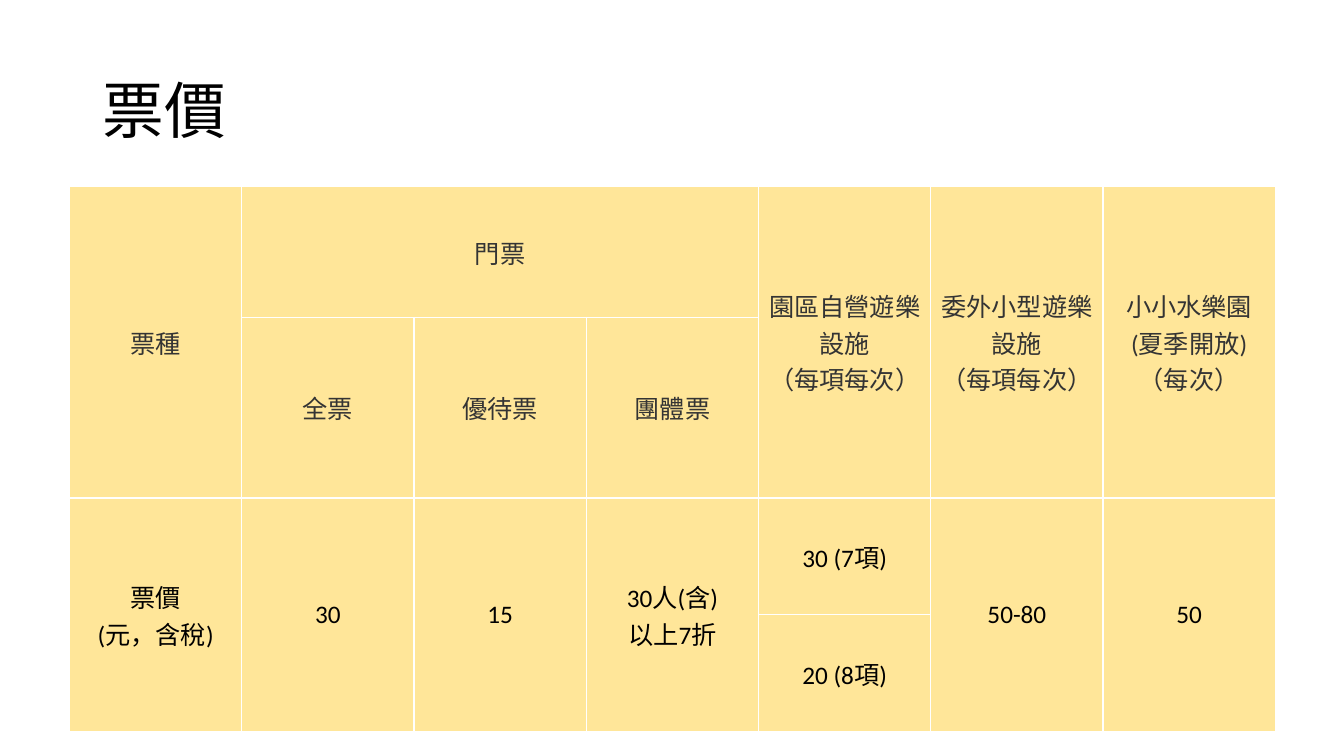
import pptx
import pptx.util
import pptx.dml.color
import pptx.enum.text
import pptx.oxml
import pptx.oxml.ns

Inches = pptx.util.Inches
Pt = pptx.util.Pt
ANCHOR = pptx.enum.text.MSO_ANCHOR
ALIGN = pptx.enum.text.PP_ALIGN

FONT = "Calibri"
COLORS = {"black": "000000", "header": "343434", "cell": "FFE699", "border": "FFFFFF"}
ROW_HEIGHTS = [1.3, 1.79, 1.16, 1.16]
COLUMNS = 7
HEADER_ROWS = 2
PRICES = [
    (0, 0, 2, 1, "票種"),
    (0, 1, 1, 3, "門票"),
    (0, 4, 2, 1, "園區自營遊樂設施\n（每項每次）"),
    (0, 5, 2, 1, "委外小型遊樂設施\n（每項每次）"),
    (0, 6, 2, 1, "小小水樂園\n(夏季開放)\n（每次）"),
    (1, 1, 1, 1, "全票"),
    (1, 2, 1, 1, "優待票"),
    (1, 3, 1, 1, "團體票"),
    (2, 0, 2, 1, "票價\n(元，含稅)"),
    (2, 1, 2, 1, "30"),
    (2, 2, 2, 1, "15"),
    (2, 3, 2, 1, "30人(含)\n以上7折"),
    (2, 4, 1, 1, "30 (7項)"),
    (2, 5, 2, 1, "50-80"),
    (2, 6, 2, 1, "50"),
    (3, 4, 1, 1, "20 (8項)"),
]


def rgb(name):
    return pptx.dml.color.RGBColor.from_string(COLORS[name])


def add_lines(p, text, size, color):
    for i, line in enumerate(text.split("\n")):
        if i:
            p.add_line_break()
        r = p.add_run()
        r.text = line
        r.font.name = FONT
        r.font.size = Pt(size)
        r.font.color.rgb = rgb(color)


def style_cell(cell):
    cell.fill.solid()
    cell.fill.fore_color.rgb = rgb("cell")
    cell.vertical_anchor = ANCHOR.MIDDLE
    cell.margin_left = cell.margin_right = Inches(0.03)
    cell.margin_top = cell.margin_bottom = Inches(0.03)
    tcPr = cell._tc.get_or_add_tcPr()
    for i, side in enumerate(("lnL", "lnR", "lnT", "lnB")):
        tcPr.insert(i, pptx.oxml.parse_xml(
            f'<a:{side} {pptx.oxml.ns.nsdecls("a")} w="{Pt(1)}"><a:solidFill>'
            f'<a:srgbClr val="{COLORS["border"]}"/></a:solidFill></a:{side}>'))


def add_title(s, left, top, width, height):
    sp = s.shapes.add_textbox(Inches(left), Inches(top), Inches(width), Inches(height))
    tf = sp.text_frame
    tf.word_wrap = True
    tf.vertical_anchor = ANCHOR.MIDDLE
    p = tf.paragraphs[0]
    p.line_spacing = 0.9
    add_lines(p, "票價", 44, "black")


def add_price_table(s, left, top, width, height):
    table = s.shapes.add_table(len(ROW_HEIGHTS), COLUMNS, Inches(left), Inches(top),
                               Inches(width), Inches(height)).table
    for column in table.columns:
        column.width = Inches(width / COLUMNS)
    for row, row_height in zip(table.rows, ROW_HEIGHTS):
        row.height = Inches(height * row_height / sum(ROW_HEIGHTS))
    for cell in table.iter_cells():
        style_cell(cell)
    for row, col, row_span, col_span, text in PRICES:
        cell = table.cell(row, col)
        if row_span * col_span > 1:
            cell.merge(table.cell(row + row_span - 1, col + col_span - 1))
        p = cell.text_frame.paragraphs[0]
        p.alignment = ALIGN.CENTER
        add_lines(p, text, 18, "header" if row < HEADER_ROWS else "black")


def main():
    prs = pptx.Presentation()
    prs.slide_width = Inches(13.33)
    prs.slide_height = Inches(7.5)
    s = prs.slides.add_slide(prs.slide_layouts[6])
    add_title(s, 0.92, 0.4, 11.5, 1.45)
    add_price_table(s, 0.69, 1.85, 11.96, 5.41)
    prs.save("out.pptx")


if __name__ == "__main__":
    main()
